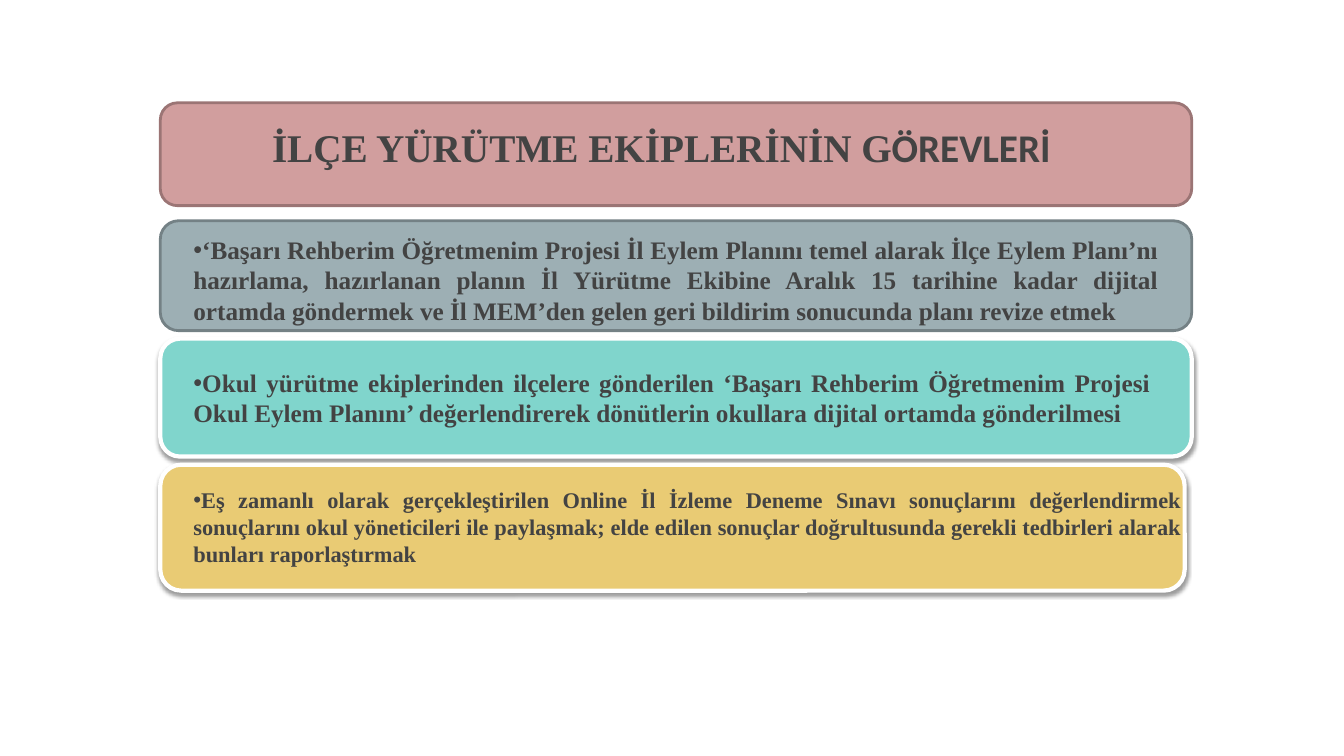
from dataclasses import dataclass

from lxml.etree import SubElement
from pptx import Presentation
from pptx.dml.color import RGBColor
from pptx.enum.shapes import MSO_SHAPE as Preset
from pptx.enum.text import MSO_ANCHOR as Anchor
from pptx.enum.text import MSO_AUTO_SIZE as AutoSize
from pptx.enum.text import PP_ALIGN as Align
from pptx.oxml.ns import qn
from pptx.shapes.autoshape import Shape
from pptx.slide import Slide
from pptx.util import Emu, Pt

EMU_PER_PX = 9144
SERIF = "Times New Roman"
SANS = "Calibri"
COLORS = {
    "text": "434343",
    "rose": "D19E9E",
    "rose_edge": "9B7575",
    "slate": "9DAFB4",
    "slate_edge": "748185",
    "teal": "80D5CC",
    "gold": "E9CB74",
    "white": "FFFFFF",
    "shadow": "000000",
}


@dataclass(frozen=True)
class Frame:
    left: int
    top: int
    width: int
    height: int

    def emu(self) -> tuple[Emu, Emu, Emu, Emu]:
        return px(self.left), px(self.top), px(self.width), px(self.height)


@dataclass(frozen=True)
class Panel:
    frame: Frame
    fill: str
    edge: str
    edge_width: int
    shadow: bool = False


@dataclass(frozen=True)
class Words:
    text: str
    font: str = SERIF


@dataclass(frozen=True)
class Caption:
    frame: Frame
    size: int
    words: tuple[Words, ...]
    bullet: bool = True


PANELS = (
    Panel(Frame(159, 102, 1023, 102), "rose", "rose_edge", 2),
    Panel(Frame(159, 219, 1023, 109), "slate", "slate_edge", 2),
    Panel(Frame(159, 336, 1023, 117), "teal", "white", 3, True),
    Panel(Frame(159, 461, 1016, 125), "gold", "white", 3, True),
)

CAPTIONS = (
    Caption(
        Frame(260, 117, 984, 57),
        28,
        (Words("İLÇE YÜRÜTME EKİPLERİNİN G"), Words("ÖREVLERİ", SANS)),
        bullet=False,
    ),
    Caption(
        Frame(182, 227, 977, 101),
        18,
        (Words(
            "‘Başarı Rehberim Öğretmenim Projesi İl Eylem Planını temel alarak "
            "İlçe Eylem Planı’nı hazırlama, hazırlanan planın İl Yürütme Ekibine "
            "Aralık 15 tarihine kadar dijital ortamda göndermek ve İl MEM’den "
            "gelen geri bildirim sonucunda planı revize etmek"
        ),),
    ),
    Caption(
        Frame(182, 359, 969, 71),
        18,
        (Words(
            "Okul yürütme ekiplerinden ilçelere gönderilen ‘Başarı Rehberim "
            "Öğretmenim Projesi Okul Eylem Planını’ değerlendirerek dönütlerin "
            "okullara dijital ortamda gönderilmesi"
        ),),
    ),
    Caption(
        Frame(182, 477, 1000, 91),
        16,
        (Words(
            "Eş zamanlı olarak gerçekleştirilen Online İl İzleme Deneme Sınavı "
            "sonuçlarını değerlendirmek sonuçlarını okul yöneticileri ile "
            "paylaşmak; elde edilen sonuçlar doğrultusunda gerekli tedbirleri "
            "alarak bunları raporlaştırmak"
        ),),
    ),
)


def px(length: int) -> Emu:
    return Emu(length * EMU_PER_PX)


def color(name: str) -> RGBColor:
    return RGBColor.from_string(COLORS[name])


def add_shadow(shape: Shape) -> None:
    effects = shape.element.spPr.find(qn("a:effectLst"))
    shadow = SubElement(
        effects,
        qn("a:outerShdw"),
        blurRad=str(Pt(3.1)),
        dist=str(Pt(1.6)),
        dir="5400000",
        rotWithShape="0",
    )
    tint = SubElement(shadow, qn("a:srgbClr"), val=COLORS["shadow"])
    SubElement(tint, qn("a:alpha"), val="38000")


def draw_panel(page: Slide, panel: Panel) -> None:
    shape = page.shapes.add_shape(Preset.ROUNDED_RECTANGLE, *panel.frame.emu())
    shape.fill.solid()
    shape.fill.fore_color.rgb = color(panel.fill)
    shape.line.color.rgb = color(panel.edge)
    shape.line.width = Pt(panel.edge_width)
    shape.shadow.inherit = False
    if panel.shadow:
        add_shadow(shape)


def draw_caption(page: Slide, caption: Caption) -> None:
    box = page.shapes.add_textbox(*caption.frame.emu())
    frame = box.text_frame
    frame.word_wrap = True
    frame.auto_size = AutoSize.SHAPE_TO_FIT_TEXT
    frame.vertical_anchor = Anchor.MIDDLE
    para = frame.paragraphs[0]
    para.alignment = Align.JUSTIFY
    if caption.bullet:
        properties = para._p.get_or_add_pPr()
        SubElement(properties, qn("a:buFont"), typeface="Arial")
        SubElement(properties, qn("a:buChar"), char="•")
    para.font.name = SERIF
    para.font.size = Pt(caption.size)
    para.font.bold = True
    para.font.color.rgb = color("text")
    for words in caption.words:
        span = para.add_run()
        span.text = words.text
        if words.font != SERIF:
            span.font.name = words.font


def main() -> None:
    deck = Presentation()
    deck.slide_width = px(1333)
    deck.slide_height = px(750)
    page = deck.slides.add_slide(deck.slide_layouts[6])
    for panel in PANELS:
        draw_panel(page, panel)
    for caption in CAPTIONS:
        draw_caption(page, caption)
    deck.save("out.pptx")


if __name__ == "__main__":
    main()
